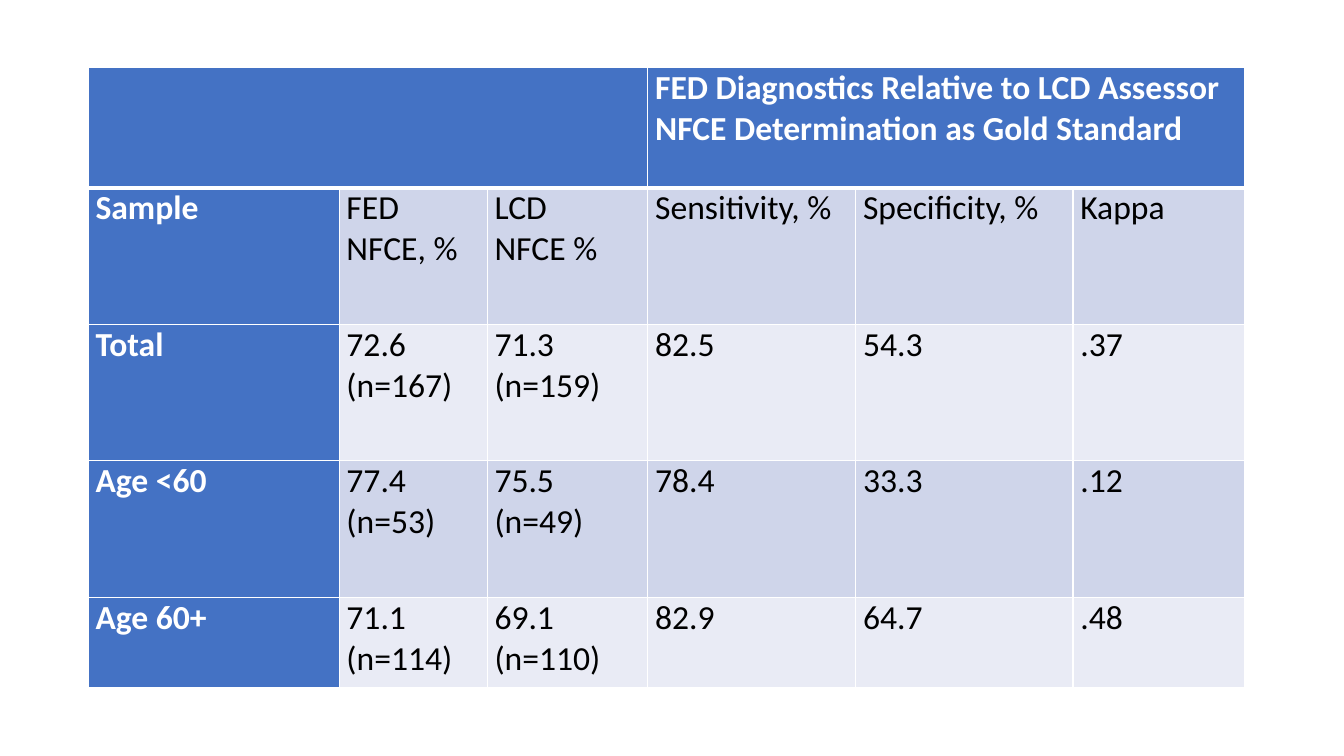
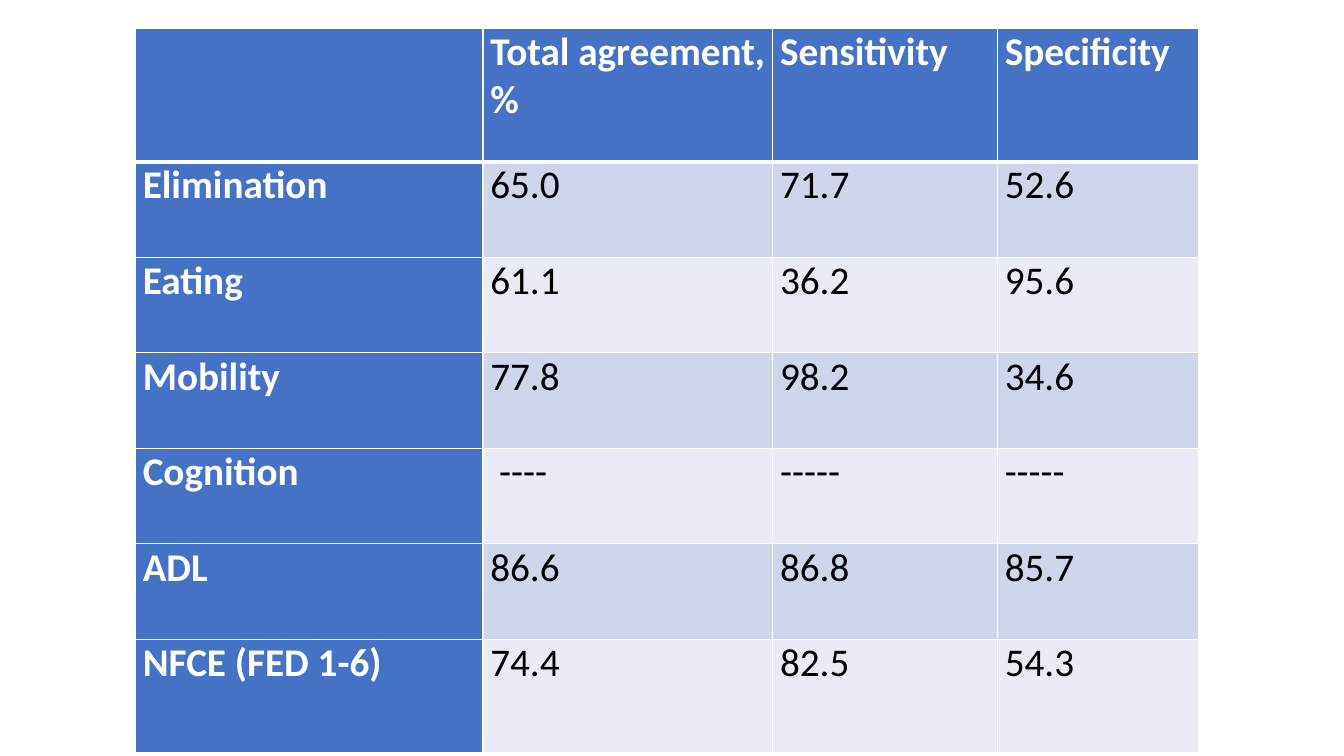
import pptx
import pptx.dml.color
import pptx.oxml.ns
import pptx.util
import lxml.etree

PX = 9525
FONT = "Calibri"
COLORS = {
    "header": "4472C4",
    "odd_band": "CFD5EA",
    "even_band": "E9EBF5",
    "header_text": "FFFFFF",
    "body_text": "000000",
    "rule": "FFFFFF",
}


def write_cell(cell, text, *, size, color, bold, fill, rules):
    cell.margin_left = cell.margin_right = 7 * PX
    cell.margin_top = cell.margin_bottom = 0
    properties = cell._tc.get_or_add_tcPr()
    for side, points in rules.items():
        line = lxml.etree.SubElement(
            properties, pptx.oxml.ns.qn(f"a:ln{side}"), w=str(pptx.util.Pt(points)))
        solid = lxml.etree.SubElement(line, pptx.oxml.ns.qn("a:solidFill"))
        lxml.etree.SubElement(solid, pptx.oxml.ns.qn("a:srgbClr"), val=COLORS["rule"])
    cell.fill.solid()
    cell.fill.fore_color.rgb = pptx.dml.color.RGBColor.from_string(COLORS[fill])
    if not text:
        return
    cell.text = text
    for paragraph in cell.text_frame.paragraphs:
        for run in paragraph.runs:
            run.font.name = FONT
            run.font.size = pptx.util.Pt(size)
            run.font.bold = bold
            run.font.color.rgb = pptx.dml.color.RGBColor.from_string(COLORS[color])


age_diagnostics = {
    "left": 84,
    "top": 64,
    "columns": [239, 141, 153, 198, 207, 163],
    "heights": [115, 130, 130, 130, 86],
    "size": 24,
    "header_spans": [(0, 2), (3, 5)],
    "rows": [
        ["", "", "", "FED Diagnostics Relative to LCD Assessor "
         "NFCE Determination as Gold Standard", "", ""],
        ["Sample", "FED NFCE, %", "LCD\nNFCE %", "Sensitivity, %", "Specificity, %", "Kappa"],
        ["Total", "72.6\n(n=167)", "71.3\n(n=159)", "82.5", "54.3", ".37"],
        ["Age <60", "77.4\n(n=53)", "75.5\n(n=49)", "78.4", "33.3", ".12"],
        ["Age 60+", "71.1\n(n=114)", "69.1\n(n=110)", "82.9", "64.7", ".48"],
    ],
}
domain_agreement = {
    "left": 129,
    "top": 27,
    "columns": [331, 276, 214, 192],
    "heights": [127] + [91] * 5 + [108],
    "size": 28,
    "header_spans": [],
    "rows": [
        ["", "Total agreement, %", "Sensitivity", "Specificity"],
        ["Elimination", "65.0", "71.7", "52.6"],
        ["Eating", "61.1", "36.2", "95.6"],
        ["Mobility", "77.8", "98.2", "34.6"],
        ["Cognition", " ----", "-----", "-----"],
        ["ADL", "86.6", "86.8", "85.7"],
        ["NFCE (FED 1-6)", "74.4", "82.5", "54.3"],
    ],
}

deck = pptx.Presentation()
deck.slide_width = 1280 * PX
deck.slide_height = 720 * PX

for results in (age_diagnostics, domain_agreement):
    slide = deck.slides.add_slide(deck.slide_layouts[6])
    columns, heights = results["columns"], results["heights"]
    table = slide.shapes.add_table(
        len(heights), len(columns), results["left"] * PX, results["top"] * PX,
        sum(columns) * PX, sum(heights) * PX).table
    table.first_col = True
    for column, width in zip(table.columns, columns):
        column.width = width * PX
    for row, height in zip(table.rows, heights):
        row.height = height * PX
    for first, last in results["header_spans"]:
        table.cell(0, first).merge(table.cell(0, last))

    for row_index, texts in enumerate(results["rows"]):
        band = "odd_band" if row_index % 2 else "even_band"
        rules = {"L": 1, "R": 1, "T": 3 if row_index == 1 else 1, "B": 1 if row_index else 3}
        for column_index, text in enumerate(texts):
            heading = row_index == 0 or column_index == 0
            write_cell(
                table.cell(row_index, column_index), text,
                size=results["size"], bold=heading, rules=rules,
                color="header_text" if heading else "body_text",
                fill="header" if heading else band)

deck.save("out.pptx")
